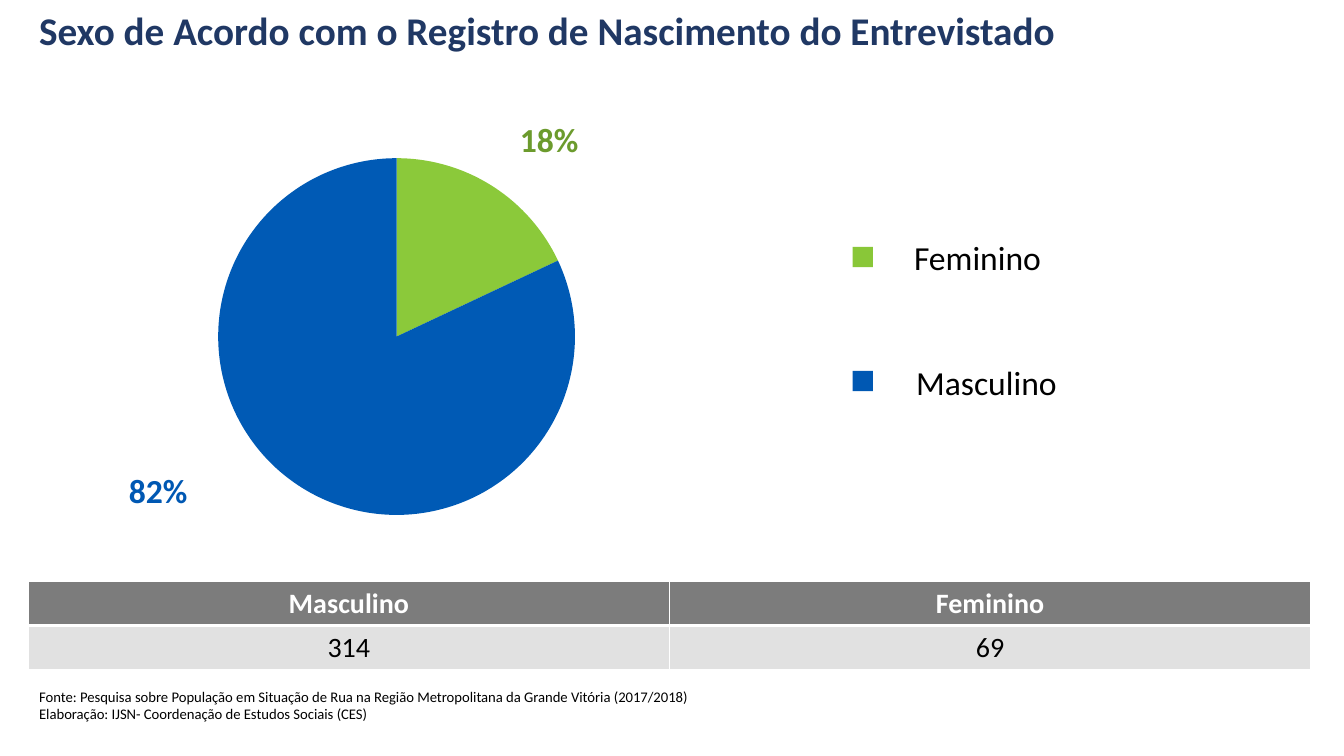
from lxml import etree
from pptx import Presentation
from pptx.chart.data import CategoryChartData
from pptx.dml.color import RGBColor
from pptx.enum.chart import XL_CHART_TYPE as ChartType
from pptx.enum.shapes import MSO_SHAPE as Shape
from pptx.enum.text import MSO_ANCHOR as Anchor, PP_ALIGN as Align
from pptx.oxml import parse_xml
from pptx.oxml.ns import nsdecls
from pptx.util import Pt

FONT = "Calibri"
NAVY = RGBColor(0x20, 0x38, 0x64)
BLACK = RGBColor(0, 0, 0)
WHITE = RGBColor(0xFF, 0xFF, 0xFF)
PIE_GREEN = RGBColor(0x8B, 0xC9, 0x3A)
PIE_BLUE = RGBColor(0x00, 0x5A, 0xB5)
KEY_GREEN = RGBColor(0x89, 0xC7, 0x38)
KEY_BLUE = RGBColor(0x00, 0x58, 0xB3)
LABEL_GREEN = RGBColor(0x6C, 0x9B, 0x2D)
HEADER_GRAY = RGBColor(0x7C, 0x7C, 0x7C)
ROW_GRAY = RGBColor(0xE1, 0xE1, 0xE1)

presentation = Presentation()
presentation.slide_width, presentation.slide_height = Pt(960), Pt(540)
slide = presentation.slides.add_slide(presentation.slide_layouts[6])


def write(frame, lines, size, color, bold=False, align=Align.LEFT, spacing=1.0):
    """Fill a text frame with one paragraph per line, all in one format."""
    frame.text = "\n".join(lines)
    font_format = {"name": FONT, "size": Pt(size), "bold": bold}
    for paragraph in frame.paragraphs:
        paragraph.alignment = align
        paragraph.line_spacing = spacing
        for name, value in font_format.items():
            setattr(paragraph.font, name, value)
        paragraph.font.color.rgb = color


def add_text(left, top, width, height, lines, size, color,
             bold=False, anchor=Anchor.TOP, wrap=False, spacing=1.0):
    box = slide.shapes.add_textbox(Pt(left), Pt(top), Pt(width), Pt(height))
    box.text_frame.word_wrap = wrap
    box.text_frame.vertical_anchor = anchor
    write(box.text_frame, lines, size, color, bold, spacing=spacing)


# Title
add_text(20.9, 2.2, 916, 44.6,
         ["Sexo de Acordo com o Registro de Nascimento do Entrevistado"],
         28, NAVY, bold=True, anchor=Anchor.MIDDLE, wrap=True, spacing=0.8)

# Pie chart
chart_data = CategoryChartData()
chart_data.categories = ["1", "2"]
chart_data.add_series("Series 1", [18, 82])
chart = slide.shapes.add_chart(
    ChartType.PIE, Pt(0), Pt(113), Pt(566.6), Pt(254.9), chart_data).chart
chart.has_title = False
chart.has_legend = False
chart.font.name = FONT
chart.font.size = Pt(10)
chart.font.color.rgb = BLACK
pie = chart.plots[0]
pie.vary_by_categories = True
for index, color in enumerate([PIE_GREEN, PIE_BLUE]):
    point_format = pie.series[0].points[index].format
    point_format.fill.solid()
    point_format.fill.fore_color.rgb = color
    point_format.line.fill.background()

plot_area = chart.element.find(".//{*}plotArea")
for old_layout in plot_area.findall("{*}layout"):
    plot_area.remove(old_layout)
layout = parse_xml(f'<c:layout {nsdecls("c")}><c:manualLayout/></c:layout>')
plot_area.insert(0, layout)
layout_values = {"layoutTarget": "inner", "xMode": "edge", "yMode": "edge",
                 "x": "0", "y": "0", "w": "1", "h": "1"}
for name, value in layout_values.items():
    tag = etree.QName(layout).namespace
    etree.SubElement(layout[0], f"{{{tag}}}{name}").set("val", value)

# Percentages
for left, top, label, color in [(364.3, 81.4, "18%", LABEL_GREEN),
                                (84.9, 332, "82%", KEY_BLUE)]:
    add_text(left, top, 57, 36, [label], 24, color, bold=True)

# Legend
for label, key_top, text_left, text_top, width, color in [
        ("Masculino", 265, 647.3, 255, 116, KEY_BLUE),
        ("Feminino", 176.4, 645.8, 165.6, 106, KEY_GREEN)]:
    key = slide.shapes.add_shape(
        Shape.RECTANGLE, Pt(609.1), Pt(key_top), Pt(14.4), Pt(14.4))
    key.shadow.inherit = False
    key.fill.solid()
    key.fill.fore_color.rgb = color
    key.line.fill.background()
    add_text(text_left, text_top, width, 36, [label], 24, BLACK)

# Table of counts
table = slide.shapes.add_table(
    2, 2, Pt(20.2), Pt(415.4), Pt(916), Pt(62.6)).table
rows = [(["Masculino", "Feminino"], HEADER_GRAY, WHITE, True, {"B": 3}),
        (["314", "69"], ROW_GRAY, BLACK, False, {"T": 3})]
for row, (texts, fill, color, bold, thick_edges) in enumerate(rows):
    for column, text in enumerate(texts):
        cell = table.cell(row, column)
        write(cell.text_frame, [text], 20, color, bold, Align.CENTER)
        cell.fill.solid()
        cell.fill.fore_color.rgb = fill
        properties = cell._tc.get_or_add_tcPr()
        for position, side in enumerate("LRTB"):
            width = Pt(thick_edges.get(side, 1))
            properties.insert(position, parse_xml(
                f'<a:ln{side} {nsdecls("a")} w="{width}"><a:solidFill>'
                f'<a:srgbClr val="{WHITE}"/></a:solidFill></a:ln{side}>'))

# Source note
add_text(20.9, 478, 916, 41.8,
         ["Fonte: Pesquisa sobre População em Situação de Rua na Região "
          "Metropolitana da Grande Vitória (2017/2018)",
          "Elaboração: IJSN- Coordenação de Estudos Sociais (CES)"],
         10.5, BLACK, anchor=Anchor.BOTTOM, wrap=True)

presentation.save("out.pptx")
